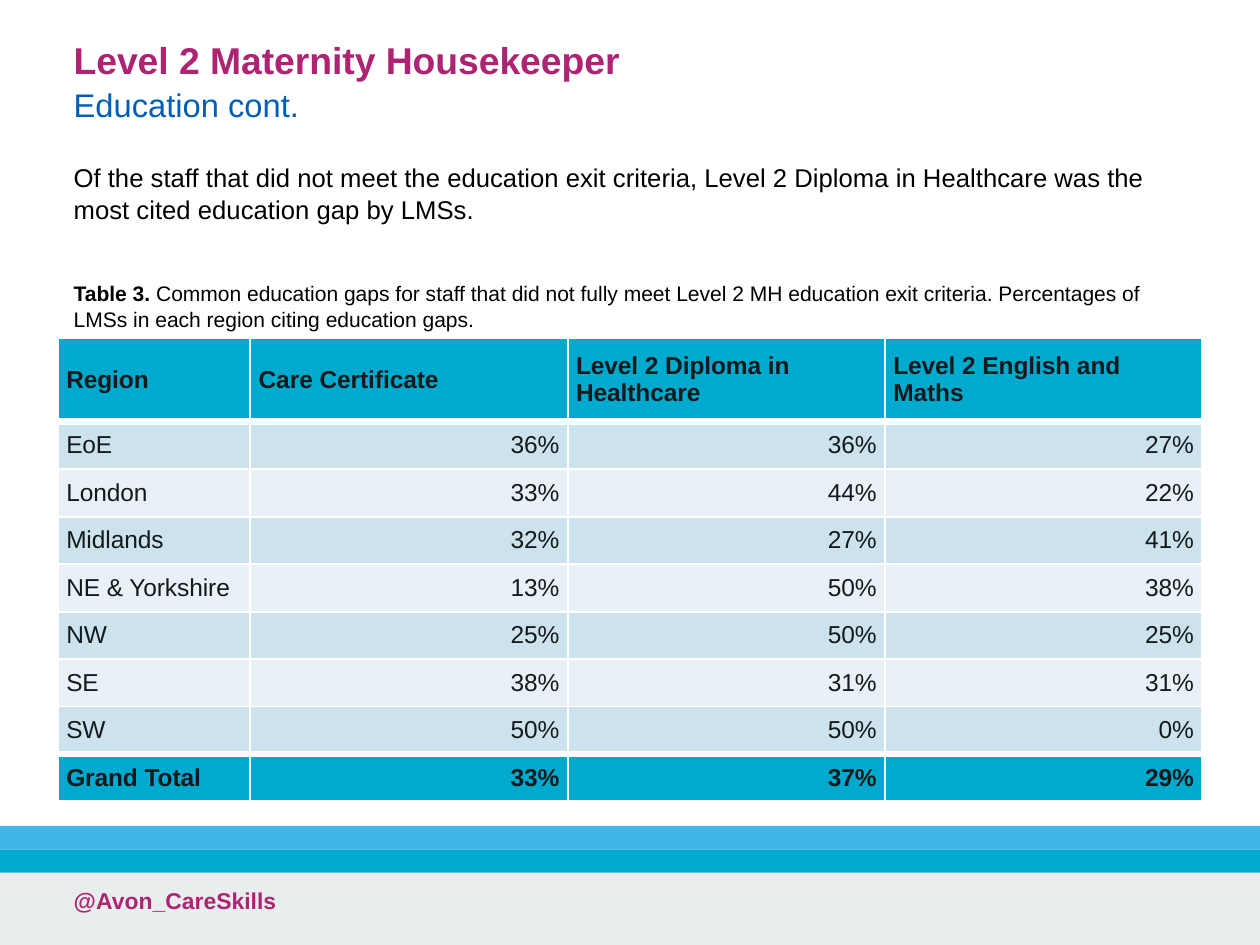
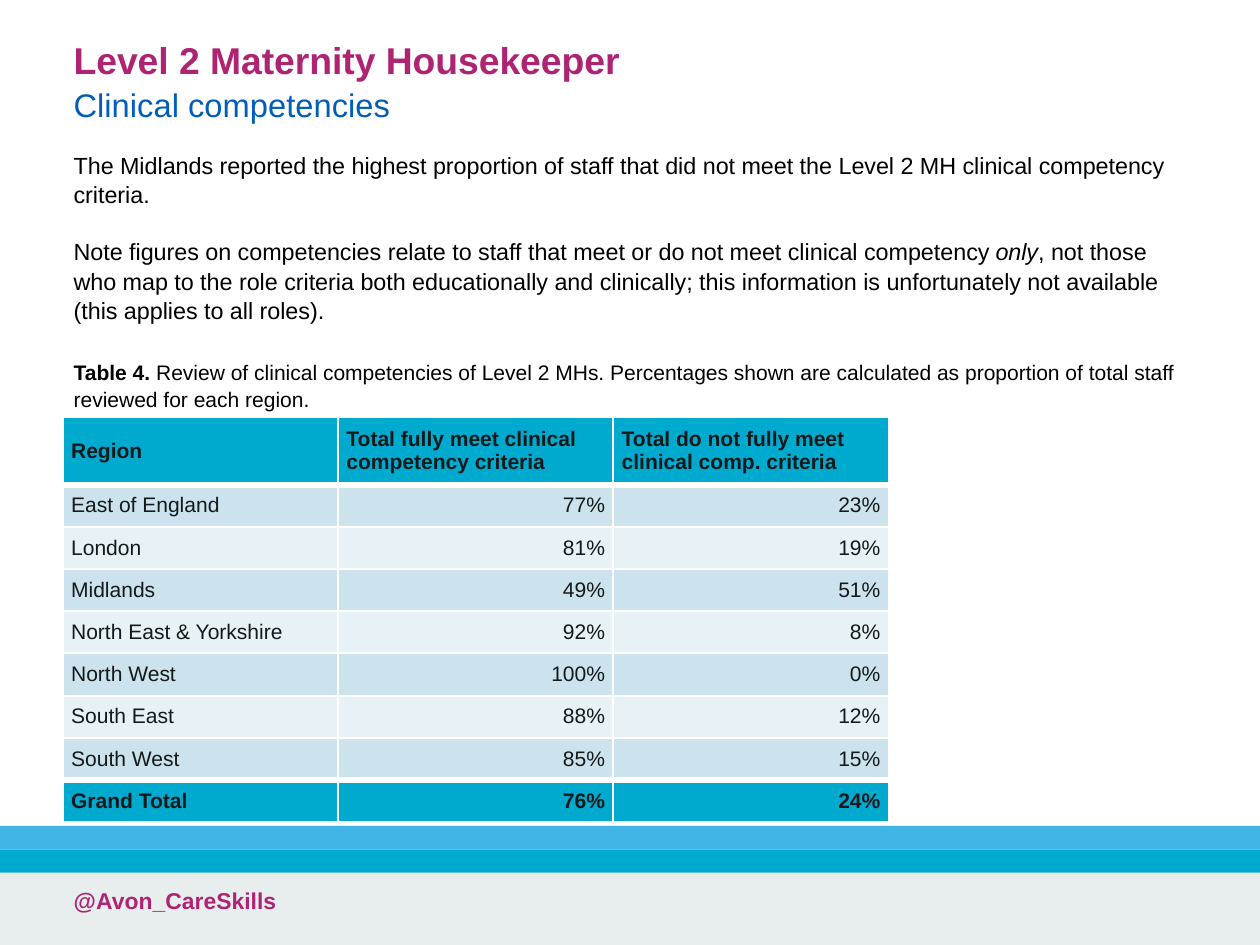
from pptx import Presentation
from pptx.dml.color import RGBColor
from pptx.enum.shapes import MSO_SHAPE as SHAPE
from pptx.enum.text import MSO_ANCHOR as ANCHOR, PP_ALIGN as ALIGN
from pptx.oxml.ns import qn
from pptx.util import Pt
from lxml.etree import SubElement

C = {"pink": "AE2473", "blue": "005EB8", "sky": "41B6E6", "teal": "00A9CE",
     "grey": "E8EDEE", "black": "000000", "ink": "141A1B", "white": "FFFFFF",
     "dark_row": "CCE2ED", "light_row": "E7F1F6"}
FONT = "Arial"
LEFT, WIDTH = 24.5, 490.5
BANDS = [("grey", 374, 31), ("sky", 354, 10), ("teal", 364, 10)]

SLIDES = [
    {
        "subtitle": "Education cont.",
        "body": [[("Of the staff that did not meet the education exit criteria, Level 2 Diploma in "
                   "Healthcare was the most cited education gap by LMSs.", "")]],
        "body_box": (65, 37.5), "body_size": 11,
        "caption": [("Table 3. ", "b"),
                    ("Common education gaps for staff that did not fully meet Level 2 MH education exit "
                     "criteria. Percentages of LMSs in each region citing education gaps.", "")],
        "caption_top": 116,
        "table_at": (24.8, 144.9), "cols": [82.5, 136, 136, 136],
        "header_height": 35.8, "row_height": 20.36, "table_size": 10.5,
        "rows": [
            ("Region", "Care Certificate", "Level 2 Diploma in Healthcare", "Level 2 English and Maths"),
            ("EoE", "36%", "36%", "27%"),
            ("London", "33%", "44%", "22%"),
            ("Midlands", "32%", "27%", "41%"),
            ("NE & Yorkshire", "13%", "50%", "38%"),
            ("NW", "25%", "50%", "25%"),
            ("SE", "38%", "31%", "31%"),
            ("SW", "50%", "50%", "0%"),
            ("Grand Total", "33%", "37%", "29%"),
        ],
    },
    {
        "subtitle": "Clinical competencies",
        "body": [
            [("The Midlands reported the highest proportion of staff that did not meet the Level 2 MH "
              "clinical competency criteria.", "")],
            [("Note figures on competencies relate to staff that meet or do not meet clinical competency ", ""),
             ("only", "i"),
             (", not those who map to the role criteria both educationally and clinically; this "
              "information is unfortunately not available (this applies to all roles).", "")],
        ],
        "body_box": (60.5, 80.5), "body_size": 10,
        "caption": [("Table 4. ", "b"),
                    ("Review of clinical competencies of Level 2 MHs. Percentages shown are calculated as "
                     "proportion of total staff reviewed for each region.", "")],
        "caption_top": 150,
        "table_at": (26.9, 178.8), "cols": [118, 118, 118],
        "header_height": 27.9, "row_height": 18.1, "table_size": 9,
        "rows": [
            ("Region", "Total fully meet clinical competency criteria",
             "Total do not fully meet clinical comp. criteria"),
            ("East of England", "77%", "23%"),
            ("London", "81%", "19%"),
            ("Midlands", "49%", "51%"),
            ("North East & Yorkshire", "92%", "8%"),
            ("North West", "100%", "0%"),
            ("South East", "88%", "12%"),
            ("South West", "85%", "15%"),
            ("Grand Total", "76%", "24%"),
        ],
    },
]


def add_text(s, top, width, height, paras, styles, spacing=1.05, gap=0):
    tf = s.shapes.add_textbox(Pt(LEFT), Pt(top), Pt(width), Pt(height)).text_frame
    tf.word_wrap = True
    for i, (runs, (size, color, bold)) in enumerate(zip(paras, styles)):
        p = tf.add_paragraph() if i else tf.paragraphs[0]
        p.line_spacing = spacing
        p.space_before = Pt(gap if i else 0)
        p.font.name, p.font.size, p.font.bold = FONT, Pt(size), bold
        p.font.color.rgb = RGBColor.from_string(C[color])
        for words, emphasis in runs:
            r = p.add_run()
            r.text = words
            if emphasis == "b":
                r.font.bold = True
            elif emphasis == "i":
                r.font.italic = True


def add_border(cell, side, width):
    ln = SubElement(cell._tc.get_or_add_tcPr(), qn(f"a:ln{side}"), w=str(Pt(width)))
    SubElement(SubElement(ln, qn("a:solidFill")), qn("a:srgbClr"), val=C["white"])


prs = Presentation()
prs.slide_width, prs.slide_height = Pt(540), Pt(405)

for d in SLIDES:
    s = prs.slides.add_slide(prs.slide_layouts[6])
    for color, top, height in BANDS:
        sp = s.shapes.add_shape(SHAPE.RECTANGLE, 0, Pt(top), prs.slide_width, Pt(height))
        sp.shadow.inherit = False
        sp.fill.solid()
        sp.fill.fore_color.rgb = RGBColor.from_string(C[color])
        sp.line.fill.background()
    add_text(s, 376.5, 315, 28.5, [[("@Avon_CareSkills", "")]], [(9.8, "pink", True)], 1)

    add_text(s, 11, WIDTH, 44, [[("Level 2 Maternity Housekeeper", "")], [(d["subtitle"], "")]],
             [(16, "pink", True), (14, "blue", False)], 1.07)
    add_text(s, d["body_box"][0], WIDTH, d["body_box"][1], d["body"],
             [(d["body_size"], "black", False)] * len(d["body"]), gap=12)
    add_text(s, d["caption_top"], WIDTH, 29, [d["caption"]], [(9, "black", False)])

    rows, cols = d["rows"], d["cols"]
    last = len(rows) - 1
    left, top = d["table_at"]
    height = d["header_height"] + last * d["row_height"]
    table = s.shapes.add_table(len(rows), len(cols), Pt(left), Pt(top), Pt(sum(cols)), Pt(height)).table
    for column, width in zip(table.columns, cols):
        column.width = Pt(width)
    for i, row in enumerate(rows):
        table.rows[i].height = Pt(d["row_height"] if i else d["header_height"])
        strong = i in (0, last)
        fill = "teal" if strong else "dark_row" if i % 2 else "light_row"
        for j, words in enumerate(row):
            cell = table.cell(i, j)
            cell.text = words
            cell.vertical_anchor = ANCHOR.MIDDLE
            cell.margin_left = cell.margin_right = cell.margin_top = cell.margin_bottom = Pt(3.6)
            add_border(cell, "L", 1)
            add_border(cell, "R", 1)
            add_border(cell, "T", 3 if i in (1, last) else 1)
            add_border(cell, "B", 3 if i in (0, last - 1) else 1)
            cell.fill.solid()
            cell.fill.fore_color.rgb = RGBColor.from_string(C[fill])
            p = cell.text_frame.paragraphs[0]
            p.alignment = ALIGN.RIGHT if i and j else ALIGN.LEFT
            p.font.name, p.font.size, p.font.bold = FONT, Pt(d["table_size"]), strong
            p.font.color.rgb = RGBColor.from_string(C["ink"])

prs.save("out.pptx")
